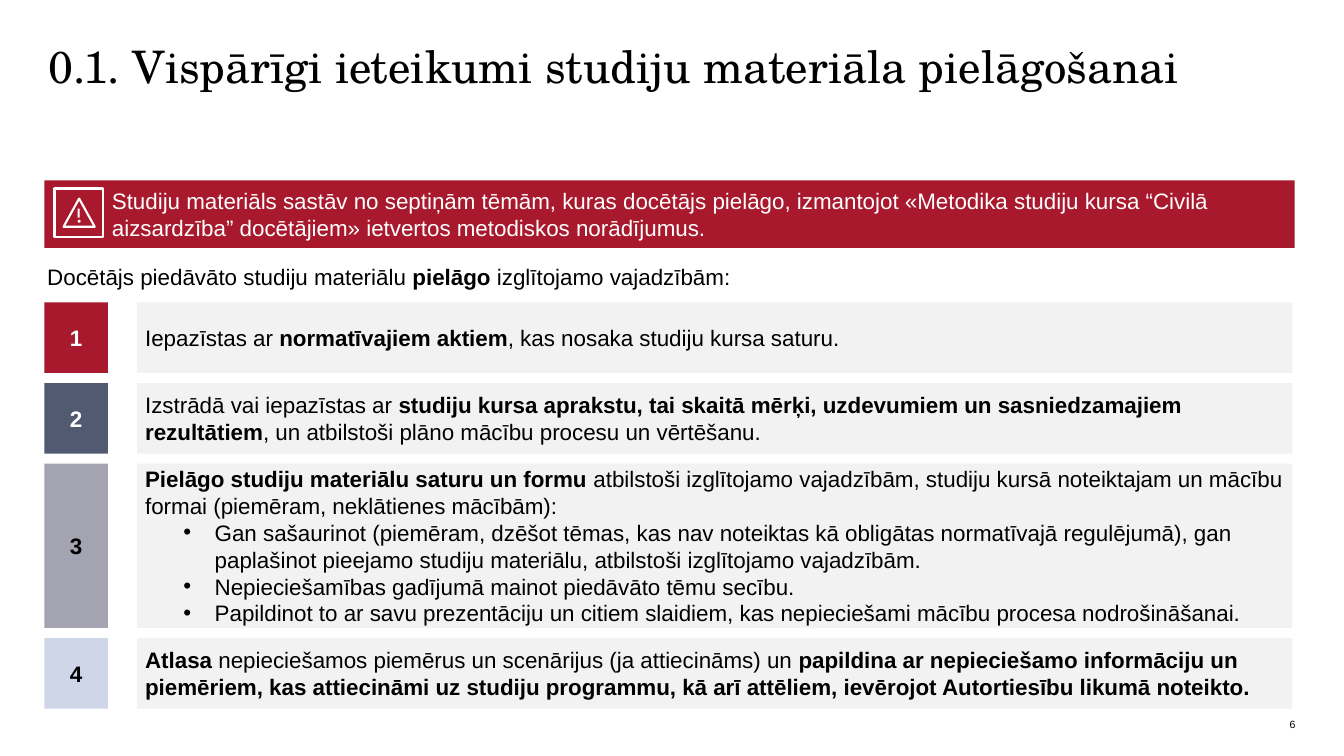
from dataclasses import dataclass
from typing import Any

from lxml import etree
from pptx import Presentation
from pptx import util as u
from pptx.dml.color import RGBColor
from pptx.enum import shapes, text
from pptx.oxml import ns

COLORS = {
    "red": "A8192D", "slate": "525A72", "grey": "A4A3B2", "ice": "CFD6E8",
    "panel": "F2F2F2", "white": "FFFFFF", "black": "000000",
}
LEFT, BADGE_WIDTH = 0.44, 0.63
PANEL_LEFT, PANEL_WIDTH = 1.36, 11.46
STEPS_TOP, STEP_GAP = 3, 0.1
STEPS = [
    ("red", "white", 0.7,
     ["Iepazīstas ar **normatīvajiem aktiem**, kas nosaka studiju kursa saturu."]),
    ("slate", "white", 0.7,
     ["Izstrādā vai iepazīstas ar **studiju kursa aprakstu, tai skaitā mērķi, uzdevumiem "
      "un sasniedzamajiem rezultātiem**, un atbilstoši plāno mācību procesu un vērtēšanu."]),
    ("grey", "black", 1.63,
     ["**Pielāgo studiju materiālu saturu un formu **atbilstoši izglītojamo vajadzībām, "
      "studiju kursā noteiktajam un mācību formai (piemēram, neklātienes mācībām):",
      "• Gan sašaurinot (piemēram, dzēšot tēmas, kas nav noteiktas kā obligātas normatīvajā "
      "regulējumā), gan paplašinot pieejamo studiju materiālu, atbilstoši izglītojamo vajadzībām.",
      "• Nepieciešamības gadījumā mainot piedāvāto tēmu secību.",
      "• Papildinot to ar savu prezentāciju un citiem slaidiem, kas nepieciešami mācību "
      "procesa nodrošināšanai."]),
    ("ice", "black", 0.7,
     ["**Atlasa** nepieciešamos piemērus un scenārijus (ja attiecināms) un **papildina ar "
      "nepieciešamo informāciju un piemēriem, kas attiecināmi uz studiju programmu, kā arī "
      "attēliem, ievērojot Autortiesību likumā noteikto.**"]),
]


@dataclass
class SlideBuilder:
    slide: Any
    body_font: str = "Arial"
    title_font: str = "TeX Gyre Schola"
    body_size: float = 16

    def color(self, name):
        return RGBColor.from_string(COLORS[name])

    def fill_text(self, holder, lines, color="black", size=None, font=None,
                  align=text.PP_ALIGN.LEFT, anchor=text.MSO_ANCHOR.TOP, insets=(0, 0, 0, 0)):
        frame = holder.text_frame
        frame.word_wrap = True
        frame.vertical_anchor = anchor
        (frame.margin_left, frame.margin_top,
         frame.margin_right, frame.margin_bottom) = map(u.Inches, insets)
        for index, line in enumerate(lines):
            paragraph = frame.add_paragraph() if index else frame.paragraphs[0]
            paragraph.alignment = align
            if line.startswith("• "):
                self.bullet(paragraph)
                line = line[2:]
            paragraph.font.size = u.Pt(size or self.body_size)
            paragraph.font.name = font or self.body_font
            paragraph.font.color.rgb = self.color(color)
            for part, words in enumerate(line.split("**")):
                if words:
                    run = paragraph.add_run()
                    run.text = words
                    if part % 2:
                        run.font.bold = True
        return frame

    def bullet(self, paragraph):
        properties = paragraph._p.get_or_add_pPr()
        properties.set("marL", str(u.Inches(0.69)))
        properties.set("indent", str(u.Inches(-0.31)))
        etree.SubElement(properties, ns.qn("a:buFont")).set("typeface", self.body_font)
        etree.SubElement(properties, ns.qn("a:buChar")).set("char", "•")

    def label(self, box, lines, **style):
        return self.fill_text(self.slide.shapes.add_textbox(*map(u.Inches, box)), lines, **style)

    def shape(self, kind, box, fill=None, line=None):
        shape = self.slide.shapes.add_shape(kind, *map(u.Inches, box))
        shape.shadow.inherit = False
        if fill:
            shape.fill.solid()
            shape.fill.fore_color.rgb = self.color(fill)
        else:
            shape.fill.background()
        if line:
            shape.line.color.rgb = self.color(line)
            shape.line.width = u.Pt(1.5)
        else:
            shape.line.fill.background()
        return shape

    def panel(self, box, fill, lines, insets=(0.08,) * 4, **style):
        panel = self.shape(shapes.MSO_SHAPE.RECTANGLE, box, fill)
        self.fill_text(panel, lines, anchor=text.MSO_ANCHOR.MIDDLE, insets=insets, **style)

    def warning_icon(self, left, top):
        kinds = shapes.MSO_SHAPE
        self.shape(kinds.RECTANGLE, (left + 0.01, top + 0.01, 0.48, 0.48), line="white")
        self.shape(kinds.ISOSCELES_TRIANGLE, (left + 0.1, top + 0.11, 0.31, 0.28), line="white")
        self.shape(kinds.RECTANGLE, (left + 0.24, top + 0.21, 0.02, 0.09), "white")
        self.shape(kinds.OVAL, (left + 0.24, top + 0.32, 0.03, 0.03), "white")


def main():
    deck = Presentation()
    deck.slide_width, deck.slide_height = u.Inches(13.33), u.Inches(7.5)
    page = SlideBuilder(deck.slides.add_slide(deck.slide_layouts[6]))

    title = page.label((0.48, 0.47, 12.37, 1.52),
                       ["0.1. Vispārīgi ieteikumi studiju materiāla pielāgošanai"],
                       size=32, font=page.title_font)
    title.paragraphs[0].line_spacing = 0.85

    page.panel((LEFT, 1.79, 12.4, 0.67), "red",
               ["Studiju materiāls sastāv no septiņām tēmām, kuras docētājs pielāgo, izmantojot "
                "«Metodika studiju kursa “Civilā aizsardzība” docētājiem» ietvertos metodiskos "
                "norādījumus."],
               insets=(0.67, 0.05, 0.1, 0.05), color="white")
    page.warning_icon(0.53, 1.86)

    page.label((0.37, 2.56, 12.25, 0.37),
               ["Docētājs piedāvāto studiju materiālu **pielāgo** izglītojamo vajadzībām:"],
               insets=(0.1, 0.05, 0.1, 0.05))

    top = STEPS_TOP
    for number, (fill, digit_color, height, lines) in enumerate(STEPS, 1):
        page.panel((PANEL_LEFT, top, PANEL_WIDTH, height), "panel", lines)
        page.panel((LEFT, top, BADGE_WIDTH, height), fill, [f"**{number}**"],
                   color=digit_color, align=text.PP_ALIGN.CENTER)
        top += height + STEP_GAP

    page.label((10.92, 7.1, 1.93, 0.15), ["6"], size=7.5,
               align=text.PP_ALIGN.RIGHT, anchor=text.MSO_ANCHOR.BOTTOM)
    deck.save("out.pptx")


if __name__ == "__main__":
    main()
